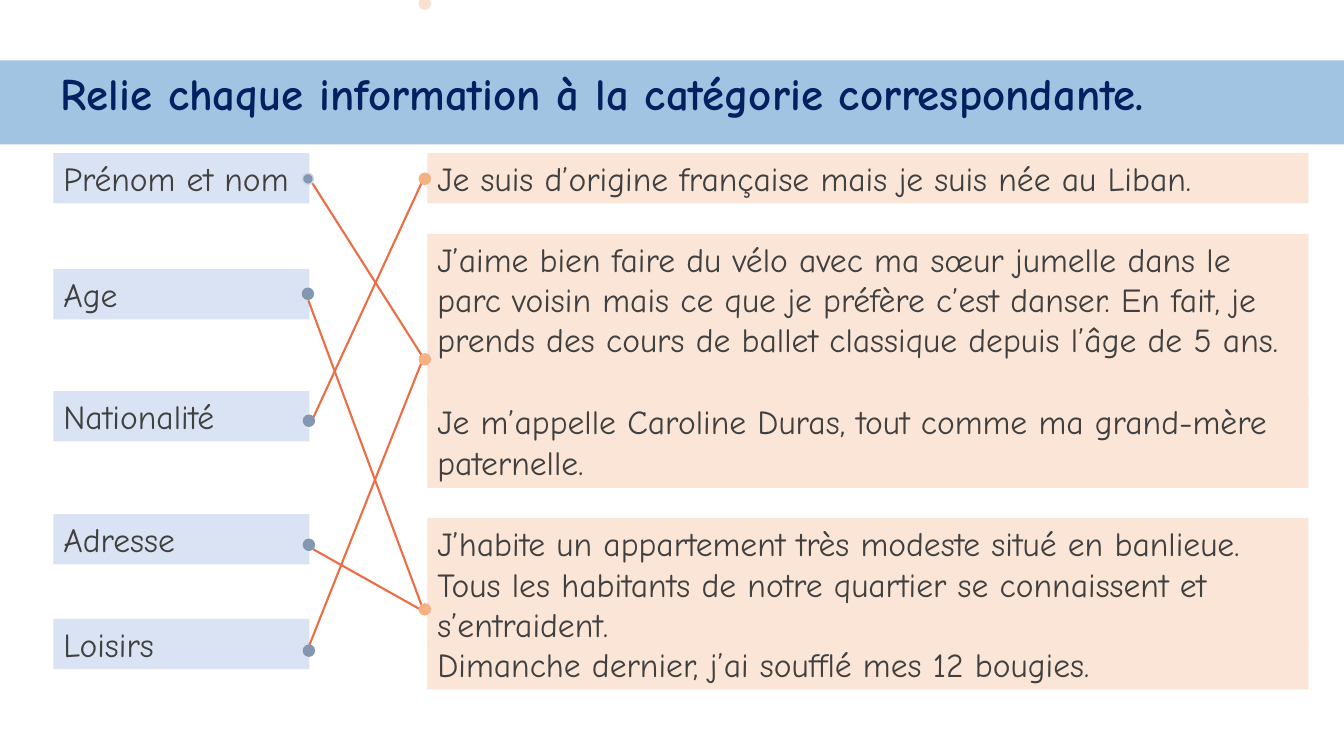
from typing import NamedTuple

from lxml import etree
from pptx import Presentation
from pptx.dml.color import RGBColor
from pptx.enum import shapes, text
from pptx.oxml import ns
from pptx.util import Pt

NAVY = RGBColor(0x00, 0x20, 0x60)
SKY = RGBColor(0xA1, 0xC4, 0xE3)
PALE_BLUE = RGBColor(0xDA, 0xE3, 0xF3)
RIM_BLUE = RGBColor(0xC9, 0xD6, 0xED)
SLATE = RGBColor(0x84, 0x97, 0xB0)
PEACH = RGBColor(0xFB, 0xE5, 0xD6)
FADED_PEACH = RGBColor(0xFA, 0xE0, 0xCE)
APRICOT = RGBColor(0xF4, 0xB1, 0x83)
CORAL = RGBColor(0xEC, 0x6E, 0x45)
CHARCOAL = RGBColor(0x40, 0x40, 0x40)

HEADING_FONT = {"name": "Comic Neue", "size": Pt(32), "bold": True}
CARD_FONT = {"name": "Comic Neue", "size": Pt(24)}
FIT_TEXT = text.MSO_AUTO_SIZE.SHAPE_TO_FIT_TEXT
DOT_SIZE = 7.9


class Column(NamedTuple):
    left: float
    width: float
    fill: RGBColor
    anchor: text.MSO_ANCHOR


class Card(NamedTuple):
    column: Column
    top: float
    height: float
    wording: str


class Match(NamedTuple):
    start_x: float
    start_y: float
    end_x: float
    end_y: float


class Dot(NamedTuple):
    left: float
    top: float
    fill: RGBColor
    rim: RGBColor


CATEGORIES = Column(38.2, 182.9, PALE_BLUE, text.MSO_ANCHOR.MIDDLE)
FACTS = Column(305.3, 629.3, PEACH, text.MSO_ANCHOR.TOP)

CARDS = [
    Card(CATEGORIES, 109.4, 36, "Prénom et nom"),
    Card(CATEGORIES, 192.2, 36, "Age"),
    Card(CATEGORIES, 279.4, 36, "Nationalité"),
    Card(CATEGORIES, 367.2, 36, "Adresse"),
    Card(CATEGORIES, 442.1, 36, "Loisirs"),
    Card(FACTS, 370.1, 94.3,
         "J’habite un appartement très modeste situé en banlieue. "
         "Tous les habitants de notre quartier se connaissent et s’entraident."),
    Card(FACTS, 109.4, 36, "Je suis d’origine française mais je suis née au Liban."),
    Card(FACTS, 456.5, 36, "Dimanche dernier, j’ai soufflé mes 12 bougies."),
    Card(FACTS, 167, 123.8,
         "J’aime bien faire du vélo avec ma sœur jumelle dans le parc voisin "
         "mais ce que je préfère c’est danser. En fait, je prends des cours de "
         "ballet classique depuis l’âge de 5 ans."),
    Card(FACTS, 283, 65.5,
         "Je m’appelle Caroline Duras, tout comme ma grand-mère paternelle."),
]

MATCHES = [
    Match(223.2, 131, 301, 253.4),
    Match(220.3, 214.6, 301, 432),
    Match(223.9, 298.1, 301, 131),
    Match(223.9, 392.4, 299.5, 434.9),
    Match(221, 460.8, 301, 259.2),
]

DOTS = [
    Dot(216, 123.8, SLATE, RIM_BLUE),
    Dot(216, 205.9, SLATE, SLATE),
    Dot(216.7, 296.6, SLATE, SLATE),
    Dot(216.7, 385.2, SLATE, SLATE),
    Dot(216.7, 460.8, SLATE, SLATE),
    Dot(299.5, -1.4, FADED_PEACH, FADED_PEACH),
    Dot(299.5, 123.8, APRICOT, APRICOT),
    Dot(299.5, 252.7, APRICOT, APRICOT),
    Dot(299.5, 431.3, APRICOT, APRICOT),
]


def apply(target, formats: dict) -> None:
    """Set each attribute named in formats on target."""
    for attribute, value in formats.items():
        setattr(target, attribute, value)


def paint(shape, colour: RGBColor) -> None:
    shape.fill.solid()
    shape.fill.fore_color.rgb = colour


def write(shape, wording: str, font: dict, colour: RGBColor, frame: dict) -> None:
    shape.text_frame.text = wording
    apply(shape.text_frame, frame)
    paragraph = shape.text_frame.paragraphs[0]
    paragraph.alignment = text.PP_ALIGN.LEFT
    run_font = paragraph.runs[0].font
    apply(run_font, font)
    run_font.color.rgb = colour


def draw_heading(slide, wording: str) -> None:
    heading = slide.shapes.title
    apply(heading, {"left": Pt(0), "top": Pt(43.2), "width": Pt(960), "height": Pt(46.1)})
    paint(heading, SKY)
    write(heading, wording, HEADING_FONT, NAVY, {
        "word_wrap": True, "auto_size": FIT_TEXT,
        "vertical_anchor": text.MSO_ANCHOR.TOP, "margin_left": Pt(43.2)})


def draw_card(slide, card: Card) -> None:
    column = card.column
    box = slide.shapes.add_textbox(
        Pt(column.left), Pt(card.top), Pt(column.width), Pt(card.height))
    paint(box, column.fill)
    write(box, card.wording, CARD_FONT, CHARCOAL, {
        "word_wrap": True, "auto_size": FIT_TEXT, "vertical_anchor": column.anchor})


def draw_match(slide, match: Match) -> None:
    link = slide.shapes.add_connector(
        shapes.MSO_CONNECTOR.STRAIGHT, *(Pt(length) for length in match))
    link.line.color.rgb = CORAL
    link.line.width = Pt(1.5)
    etree.SubElement(link._element.spPr, ns.qn("a:effectLst"))


def draw_dot(slide, dot: Dot) -> None:
    circle = slide.shapes.add_shape(
        shapes.MSO_SHAPE.OVAL, Pt(dot.left), Pt(dot.top), Pt(DOT_SIZE), Pt(DOT_SIZE))
    circle.shadow.inherit = False
    paint(circle, dot.fill)
    circle.line.color.rgb = dot.rim
    circle.line.width = Pt(1)


def main() -> None:
    deck = Presentation()
    apply(deck, {"slide_width": Pt(960), "slide_height": Pt(540)})
    title_only = deck.slide_layouts[5]
    slide = deck.slides.add_slide(title_only)
    draw_heading(slide, "Relie chaque information à la catégorie correspondante.")
    for card in CARDS:
        draw_card(slide, card)
    for match in MATCHES:
        draw_match(slide, match)
    for dot in DOTS:
        draw_dot(slide, dot)
    deck.save("out.pptx")


if __name__ == "__main__":
    main()
